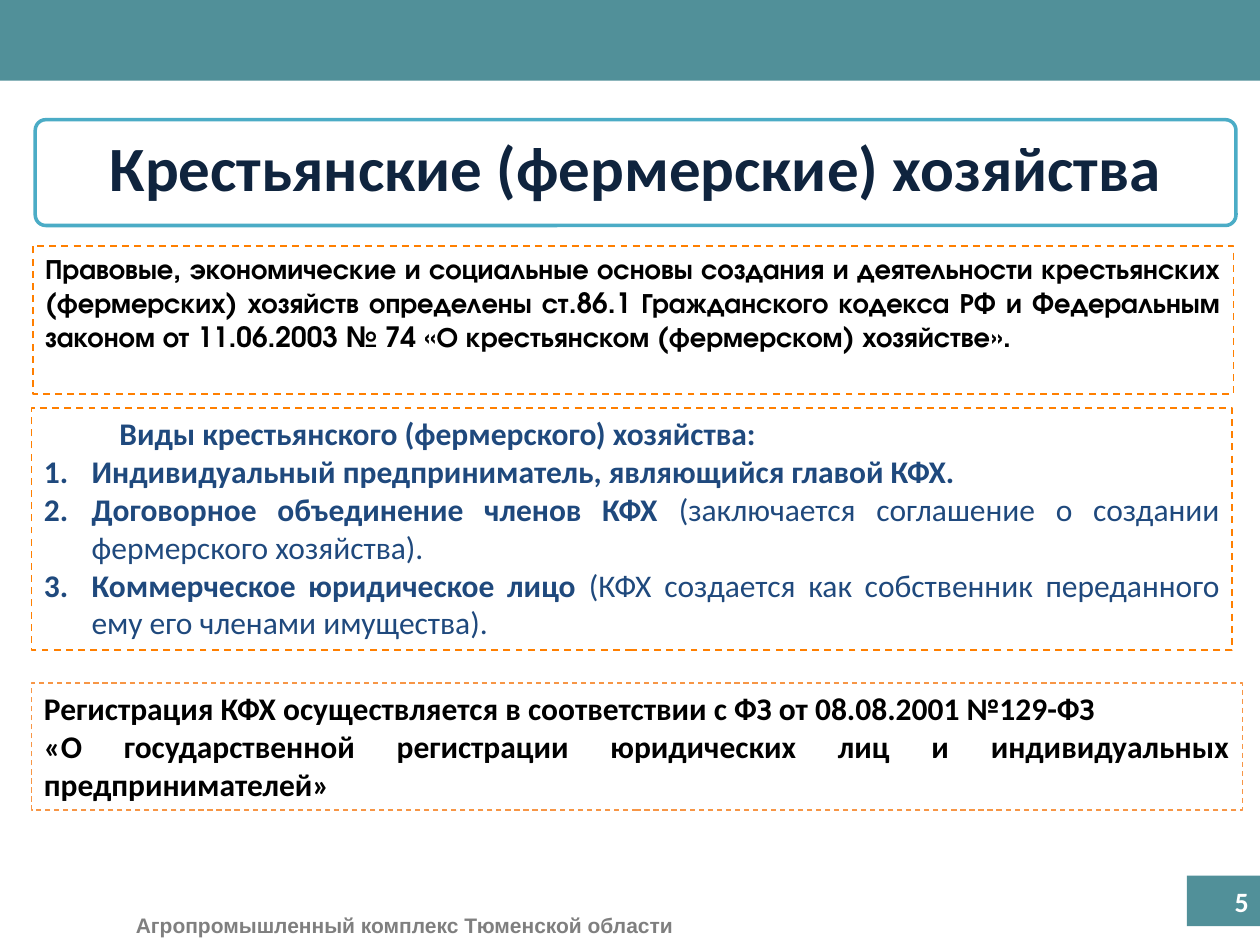
from pptx import Presentation
from pptx.dml.color import RGBColor
from pptx.enum import dml, shapes, text
from pptx.oxml.ns import qn
from pptx.util import Inches, Pt
from lxml import etree

TEAL, ORANGE, NAVY = "519099", "FF7F00", "1F497D"
RECT, ROUNDED = shapes.MSO_SHAPE.RECTANGLE, shapes.MSO_SHAPE.ROUNDED_RECTANGLE
LEFT, CENTER, RIGHT, JUSTIFY = (text.PP_ALIGN.LEFT, text.PP_ALIGN.CENTER,
                                text.PP_ALIGN.RIGHT, text.PP_ALIGN.JUSTIFY)


def add_box(place, preset=RECT, fill=None, line=None, width=1, dashed=False):
    box = page.shapes.add_shape(preset, *[Inches(value) for value in place])
    box.shadow.inherit = False
    if fill:
        box.fill.solid()
        box.fill.fore_color.rgb = RGBColor.from_string(fill)
    else:
        box.fill.background()
    if line:
        box.line.color.rgb = RGBColor.from_string(line)
        box.line.width = Pt(width)
        if dashed:
            box.line.dash_style = dml.MSO_LINE.DASH
    else:
        box.line.fill.background()
    return box


def write(box, paragraphs, size, color, font="Calibri", align=JUSTIFY, anchor=text.MSO_ANCHOR.TOP):
    frame = box.text_frame
    frame.word_wrap = True
    frame.vertical_anchor = anchor
    frame.text = "\n".join(bold for bold, plain in paragraphs)
    for para, (bold, plain) in zip(frame.paragraphs, paragraphs):
        para.alignment = align
        if plain:
            para.add_run().text = plain
        for index, span in enumerate(para.runs):
            span.font.name = font
            span.font.size = Pt(size)
            span.font.bold = index == 0
            span.font.color.rgb = RGBColor.from_string(color)
    return frame


deck = Presentation()
deck.slide_width, deck.slide_height = Inches(10), Inches(7.5)
page = deck.slides.add_slide(deck.slide_layouts[6])

add_box((0, 0, 10, 0.64), fill=TEAL)
add_box((9.42, 6.95, 0.58, 0.4), fill=TEAL)

footer = page.shapes.add_textbox(Inches(0.98), Inches(7.19), Inches(4.51), Inches(0.3))
write(footer, [("Агропромышленный комплекс Тюменской области", "")], 12, "7F7F7F", "Arial", LEFT)
footer.text_frame.word_wrap = False

number = page.shapes.add_textbox(Inches(7.68), Inches(6.95), Inches(2.33), Inches(0.4))
write(number, [("5", "")], 16, "FFFFFF", align=RIGHT, anchor=text.MSO_ANCHOR.MIDDLE)

title = add_box((0.28, 0.95, 9.53, 0.84), ROUNDED, "FFFFFF", "4BACC6", 2)
title.adjustments[0] = 0.1
write(title, [("Крестьянские (фермерские) хозяйства", "")], 36, "0F243E", align=CENTER)

law = add_box((0.26, 1.95, 9.53, 1.18), line=ORANGE, dashed=True)
write(law, [("Правовые, экономические и социальные основы создания и деятельности крестьянских "
             "(фермерских) хозяйств определены ст.86.1 Гражданского кодекса РФ и Федеральным "
             "законом от 11.06.2003 № 74 «О крестьянском (фермерском) хозяйстве».", "")],
      16, "000000", "TeX Gyre Adventor")

kinds = add_box((0.25, 3.24, 9.53, 1.92), line=ORANGE, dashed=True)
frame = write(kinds, [
    ("Виды крестьянского (фермерского) хозяйства:", ""),
    ("Индивидуальный предприниматель, являющийся главой КФХ.", ""),
    ("Договорное объединение членов КФХ ",
     "(заключается соглашение о создании фермерского хозяйства)."),
    ("Коммерческое юридическое лицо ",
     "(КФХ создается как собственник переданного ему его членами имущества)."),
], 18, NAVY)
heading, *items = frame.paragraphs
heading._p.get_or_add_pPr().set("indent", str(Inches(0.6)))
for para in items:
    properties = para._p.get_or_add_pPr()
    properties.set("marL", str(Inches(0.38)))
    properties.set("indent", str(Inches(-0.38)))
    etree.SubElement(properties, qn("a:buFont"), typeface="+mj-lt")
    etree.SubElement(properties, qn("a:buAutoNum"), type="arabicPeriod")

registration = add_box((0.25, 5.42, 9.61, 1.01), line="F79646", width=0.75, dashed=True)
write(registration, [
    ("Регистрация КФХ осуществляется в соответствии с ФЗ от 08.08.2001 №129-ФЗ", ""),
    ("«О государственной регистрации юридических лиц и индивидуальных предпринимателей»", ""),
], 18, "000000")

deck.save("out.pptx")
